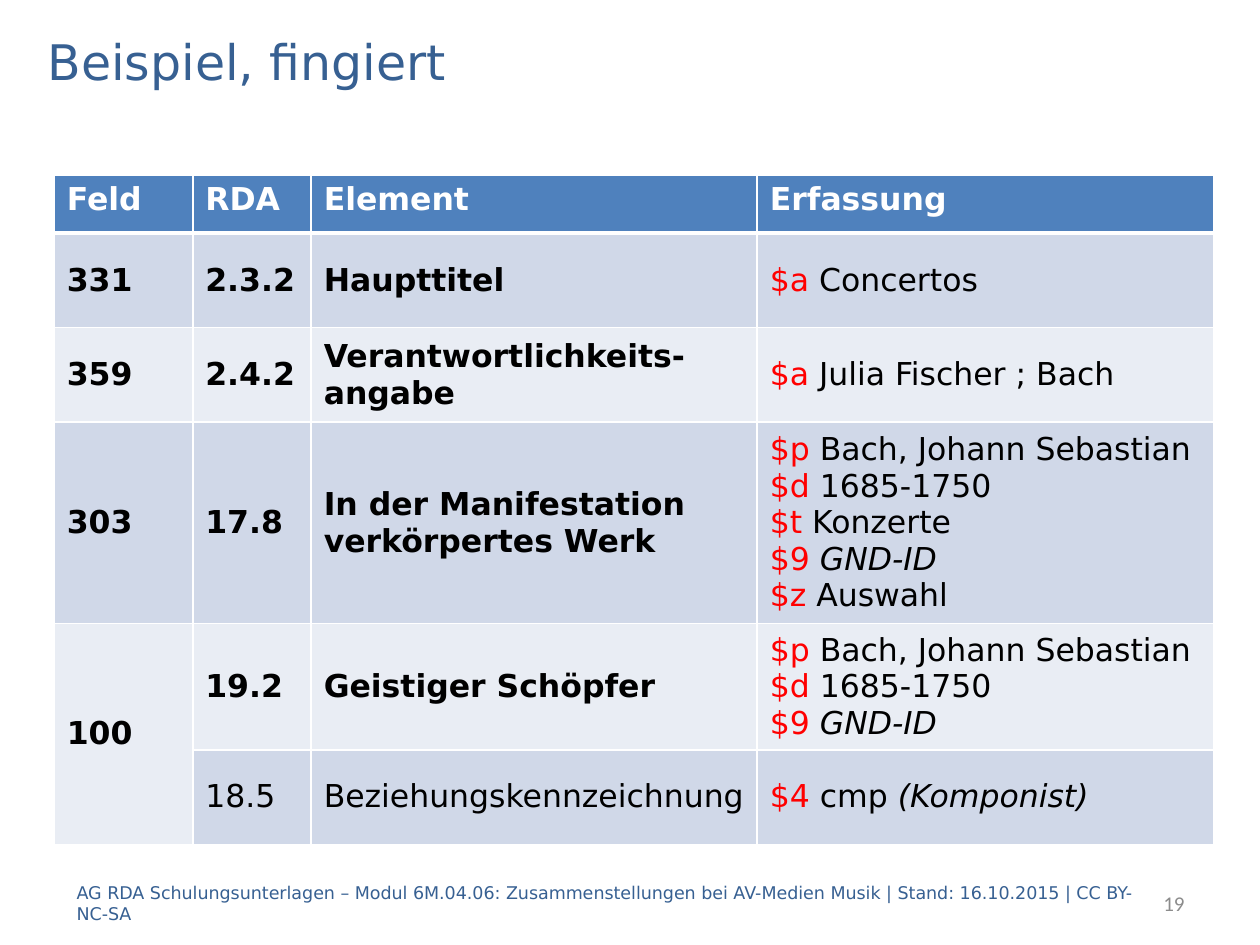
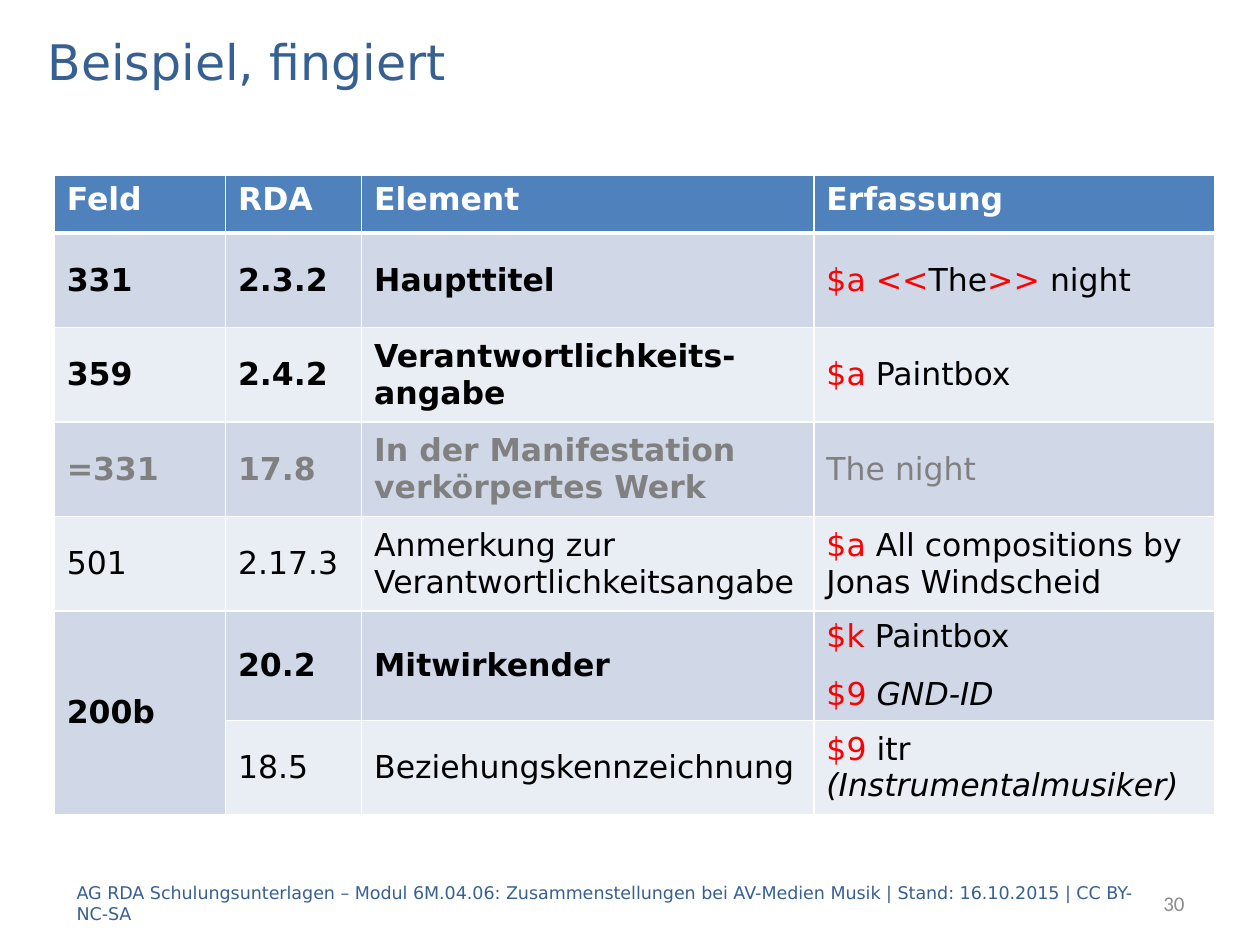
import pptx
import pptx.dml.color
import pptx.enum.text
import pptx.oxml
import pptx.oxml.ns
import pptx.util

RGB = pptx.dml.color.RGBColor
ANCHOR = pptx.enum.text.MSO_ANCHOR
ALIGN = pptx.enum.text.PP_ALIGN

TITLE_BLUE = RGB(0x37, 0x60, 0x92)
HEADER_BLUE = RGB(0x4F, 0x81, 0xBD)
BANDS = (RGB(0xD0, 0xD8, 0xE8), RGB(0xE9, 0xED, 0xF4))
WHITE = RGB(0xFF, 0xFF, 0xFF)
BLACK = RGB(0, 0, 0)
RED = RGB(0xFF, 0, 0)
GREY = RGB(0x80, 0x80, 0x80)
NUMBER_GREY = RGB(0x8C, 0x8C, 0x8C)

SANS = "DejaVu Sans"
GRID_COLUMNS, GRID_ROWS = 100, 75

TITLE = "Beispiel, fingiert"
FOOTER = ("AG RDA Schulungsunterlagen – Modul 6M.04.06: Zusammenstellungen bei "
          "AV-Medien Musik | Stand: 16.10.2015 | CC BY-NC-SA")
HEADINGS = ("Feld", "RDA", "Element", "Erfassung")
WORK = "In der Manifestation verkörpertes Werk"
RESPONSIBILITY = "Verantwortlichkeits-angabe"
RELATIONSHIP = "Beziehungskennzeichnung"
COMPOSER = "*$p *Bach, Johann Sebastian\n*$d* 1685-1750"
AUTHORITY = "*$9 *_GND-ID_"

# Each entry: field, RDA rule, element, content, then text colour and bold columns.
# In the content, *…* is red and _…_ is italic; a field of None joins the cell above.
ALL_BOLD, RULE_BOLD, PLAIN = (0, 1, 2), (1, 2), ()
CONCERTOS = [
    ("331", "2.3.2", "Haupttitel", "*$a* Concertos", BLACK, ALL_BOLD),
    ("359", "2.4.2", RESPONSIBILITY, "*$a *Julia Fischer ; Bach", BLACK, ALL_BOLD),
    ("303", "17.8", WORK,
     f"{COMPOSER}\n*$t* Konzerte\n{AUTHORITY}\n*$z* Auswahl", BLACK, ALL_BOLD),
    ("100", "19.2", "Geistiger Schöpfer", f"{COMPOSER}\n{AUTHORITY}", BLACK, ALL_BOLD),
    (None, "18.5", RELATIONSHIP, "*$4 *cmp _(Komponist)_", BLACK, PLAIN),
]
THE_NIGHT = [
    ("331", "2.3.2", "Haupttitel", "*$a <<*The*>> *night", BLACK, ALL_BOLD),
    ("359", "2.4.2", RESPONSIBILITY, "*$a *Paintbox", BLACK, ALL_BOLD),
    ("=331", "17.8", WORK, "The night", GREY, ALL_BOLD),
    ("501", "2.17.3", "Anmerkung zur Verantwortlichkeitsangabe",
     "*$a *All compositions by Jonas Windscheid", BLACK, PLAIN),
    ("200b", "20.2", "Mitwirkender", f"*$k *Paintbox\n{AUTHORITY}", BLACK, ALL_BOLD),
    (None, "18.5", RELATIONSHIP, "*$9 *itr _(Instrumentalmusiker)_", BLACK, PLAIN),
]


class Deck:
    def __init__(self):
        self.presentation = pptx.Presentation()
        self.presentation.slide_width = pptx.util.Inches(10)
        self.presentation.slide_height = pptx.util.Inches(7.5)
        self.slide = None

    def x(self, columns):
        return round(self.presentation.slide_width * columns / GRID_COLUMNS)

    def y(self, rows):
        return round(self.presentation.slide_height * rows / GRID_ROWS)

    def new_slide(self, number):
        self.slide = self.presentation.slides.add_slide(self.presentation.slide_layouts[6])
        self.text(TITLE, (2.8, 2, 94.5, 5.6), size=28, color=TITLE_BLUE)
        self.text(FOOTER, (5.1, 69.7, 87.4, 4), size=10, color=TITLE_BLUE)
        self.text(str(number), (79.1, 69.7, 15.9, 4), size=12, color=NUMBER_GREY,
                  font="Calibri", align=ALIGN.RIGHT)

    def text(self, words, place, size, color, font=SANS, align=ALIGN.LEFT):
        left, top, width, height = place
        frame = self.slide.shapes.add_textbox(
            self.x(left), self.y(top), self.x(width), self.y(height)).text_frame
        frame.word_wrap = True
        frame.vertical_anchor = ANCHOR.MIDDLE
        frame.paragraphs[0].alignment = align
        self.run(frame.paragraphs[0], words, color, size=size, name=font)

    def run(self, paragraph, words, color, **formats):
        run = paragraph.add_run()
        run.text = words
        run.font.color.rgb = color
        for key, value in ({"name": SANS, "size": 18} | formats).items():
            setattr(run.font, key, pptx.util.Pt(value) if key == "size" else value)

    def marked_text(self, paragraph, words, color, bold):
        """Write words, with *…* in red and _…_ in italics."""
        for i, part in enumerate(words.split("*")):
            for j, piece in enumerate(part.split("_")):
                if piece:
                    self.run(paragraph, piece, RED if i % 2 else color,
                             bold=bold, italic=bool(j % 2))

    def borders(self, cell, **widths):
        properties = cell._tc.get_or_add_tcPr()
        for side in "LRTB":
            width = pptx.util.Pt(widths.get(side, 1))
            properties.append(pptx.oxml.parse_xml(
                f'<a:ln{side} {pptx.oxml.ns.nsdecls("a")} w="{width}">'
                f'<a:solidFill><a:srgbClr val="{WHITE}"/></a:solidFill></a:ln{side}>'))

    def fill(self, cell, color):
        cell.fill.solid()
        cell.fill.fore_color.rgb = color

    def body_cell(self, cell, words, color, bold, list_gap):
        cell.vertical_anchor = ANCHOR.MIDDLE
        lines = words.split("\n")
        gap = pptx.util.Pt(list_gap if len(lines) > 1 else 6)
        for i, line in enumerate(lines):
            frame = cell.text_frame
            paragraph = frame.add_paragraph() if i else frame.paragraphs[0]
            paragraph.space_before = paragraph.space_after = gap
            self.marked_text(paragraph, line, color, bold)

    def table(self, entries, column_widths, height, list_gap):
        """Draw the entries; list_gap is the spacing in cells of several lines."""
        holder = self.slide.shapes.add_table(
            len(entries) + 1, len(HEADINGS), self.x(4.3), self.y(13.9),
            self.x(sum(column_widths)), self.y(height))
        table = holder.table
        for column, width in zip(table.columns, column_widths):
            column.width = self.x(width)
        for i, row in enumerate(table.rows):
            row.height = self.y(7.5 if i else 4.6)
        holder.height = self.y(height)

        for column, heading in enumerate(HEADINGS):
            cell = table.cell(0, column)
            self.borders(cell, B=3)
            self.fill(cell, HEADER_BLUE)
            self.run(cell.text_frame.paragraphs[0], heading, WHITE, bold=True)
        for i, (*contents, color, bold_columns) in enumerate(entries, start=1):
            for column, words in enumerate(contents):
                cell = table.cell(i, column)
                self.borders(cell, T=3 if i == 1 else 1)
                self.fill(cell, BANDS[(i - 1) % 2])
                if words is None:
                    table.cell(i - 1, column).merge(cell)
                else:
                    self.body_cell(cell, words, color, column in bold_columns, list_gap)


def main():
    deck = Deck()
    deck.new_slide(19)
    deck.table(CONCERTOS, (11, 9.4, 35.4, 36.2), height=53, list_gap=0)
    deck.new_slide(30)
    deck.table(THE_NIGHT, (13.6, 10.8, 35.9, 31.8), height=50.5, list_gap=6)
    deck.presentation.save("out.pptx")


if __name__ == "__main__":
    main()
